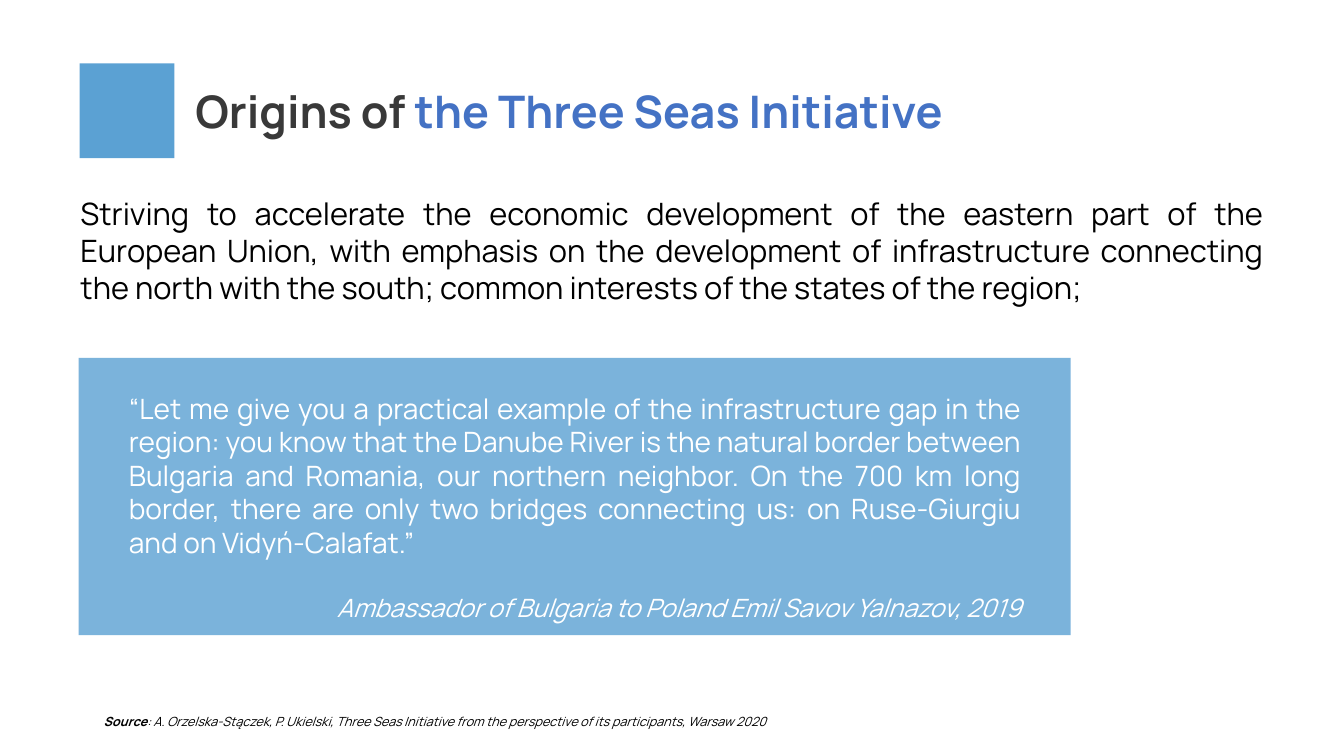
from dataclasses import dataclass

from lxml.etree import SubElement
from pptx import Presentation
from pptx.dml.color import RGBColor
from pptx.enum.shapes import MSO_SHAPE as Shape
from pptx.enum.text import PP_ALIGN as Align
from pptx.oxml.ns import qn
from pptx.util import Inches, Pt


@dataclass(frozen=True)
class Theme:
    font: str = "Manrope"
    sky: str = "5BA1D3"
    accent: str = "4472C4"
    dark: str = "393939"
    black: str = "000000"
    white: str = "FFFFFF"
    title: int = 32
    body: int = 22
    quote: int = 20
    speaker: int = 18
    source: int = 9


THEME = Theme()


def add_block(slide, left, top, width, height, opacity=100):
    block = slide.shapes.add_shape(
        Shape.RECTANGLE, Inches(left), Inches(top), Inches(width), Inches(height))
    block.shadow.inherit = False
    block.line.fill.background()
    block.fill.solid()
    block.fill.fore_color.rgb = RGBColor.from_string(THEME.sky)
    if opacity < 100:
        color = block.fill._xPr.find(qn("a:solidFill"))[0]
        SubElement(color, qn("a:alpha"), val=str(opacity * 1000))


def add_frame(slide, left, top, width, height):
    """Return the text frame of a new wrapping text box."""
    box = slide.shapes.add_textbox(
        Inches(left), Inches(top), Inches(width), Inches(height))
    box.text_frame.word_wrap = True
    return box.text_frame


def write(paragraph, text, *, size, color, bold=False, italic=False, align=None):
    """Append a formatted run to a paragraph."""
    if align is not None:
        paragraph.alignment = align
    run = paragraph.add_run()
    run.text = text
    run.font.name = THEME.font
    run.font.size = Pt(size)
    run.font.bold = bold
    run.font.italic = italic
    run.font.color.rgb = RGBColor.from_string(color)


def add_title(slide):
    add_block(slide, 0.79, 0.63, 0.94, 0.94)
    title = add_frame(slide, 1.84, 0.78, 11.57, 0.64).paragraphs[0]
    for text, color in (("Origins of ", THEME.dark),
                        ("the Three Seas Initiative", THEME.accent)):
        write(title, text, size=THEME.title, color=color, bold=True)


def add_summary(slide):
    summary = add_frame(slide, 0.7, 1.88, 11.93, 1.58).paragraphs[0]
    write(summary,
          "Striving to accelerate the economic development of the eastern part "
          "of the European Union, with emphasis on the development of "
          "infrastructure connecting the north with the south; common interests "
          "of the states of the region;",
          size=THEME.body, color=THEME.black, align=Align.JUSTIFY)


def add_quote(slide):
    add_block(slide, 0.78, 3.55, 9.84, 2.75, opacity=80)
    frame = add_frame(slide, 1.18, 3.83, 9.05, 2.42)
    write(frame.paragraphs[0],
          "“Let me give you a practical example of the infrastructure gap in the "
          "region: you know that the Danube River is the natural border between "
          "Bulgaria and Romania, our northern neighbor. On the 700 km long "
          "border, there are only two bridges connecting us: on Ruse-Giurgiu "
          "and on Vidyń-Calafat.”",
          size=THEME.quote, color=THEME.white, align=Align.JUSTIFY)
    speaker = frame.add_paragraph()
    speaker.space_before = Pt(24)
    write(speaker, "Ambassador of Bulgaria to Poland Emil Savov Yalnazov, 2019",
          size=THEME.speaker, color=THEME.white, italic=True, align=Align.RIGHT)


def add_source(slide):
    source = add_frame(slide, 0.93, 7.03, 7.63, 0.25).paragraphs[0]
    for text, bold in (
            ("Source", True),
            (": A. Orzelska-Stączek, P. Ukielski, Three Seas Initiative from the "
             "perspective of its participants, Warsaw 2020", False)):
        write(source, text, size=THEME.source, color=THEME.black,
              bold=bold, italic=True)


def main():
    deck = Presentation()
    deck.slide_width, deck.slide_height = Inches(13.33), Inches(7.5)
    slide = deck.slides.add_slide(deck.slide_layouts[6])
    add_title(slide)
    add_summary(slide)
    add_quote(slide)
    add_source(slide)
    deck.save("out.pptx")


if __name__ == "__main__":
    main()
